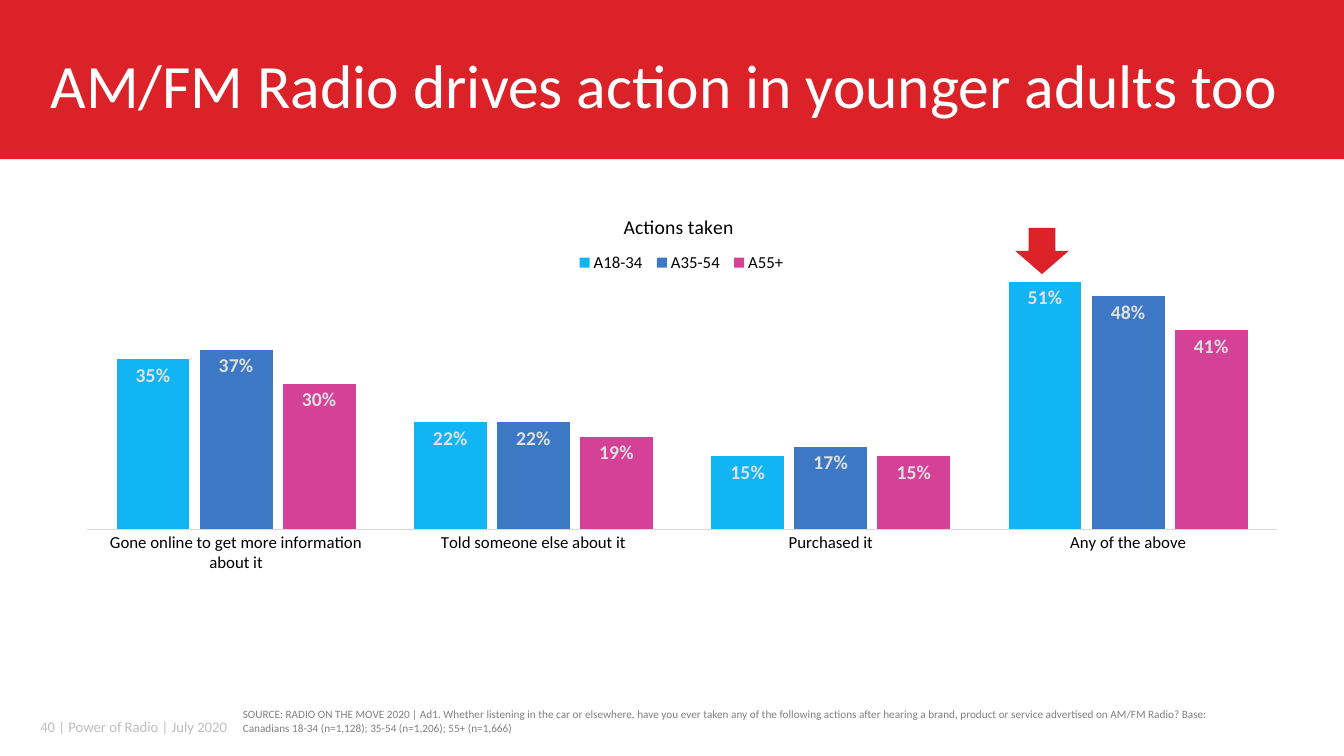
from lxml import etree
from pptx import Presentation
from pptx.chart.data import CategoryChartData
from pptx.dml.color import RGBColor
from pptx.enum.chart import XL_CHART_TYPE, XL_LABEL_POSITION, XL_LEGEND_POSITION, XL_TICK_MARK
from pptx.enum.shapes import MSO_SHAPE
from pptx.enum.text import MSO_ANCHOR, MSO_AUTO_SIZE, PP_ALIGN
from pptx.oxml.ns import qn
from pptx.util import Inches, Pt

COLUMNS = XL_CHART_TYPE.COLUMN_CLUSTERED
INSIDE_END = XL_LABEL_POSITION.INSIDE_END
LEGEND_TOP = XL_LEGEND_POSITION.TOP
NO_TICK = XL_TICK_MARK.NONE
RECTANGLE = MSO_SHAPE.RECTANGLE
DOWN_ARROW = MSO_SHAPE.DOWN_ARROW
MIDDLE = MSO_ANCHOR.MIDDLE
NO_AUTOFIT = MSO_AUTO_SIZE.NONE
LEFT = PP_ALIGN.LEFT

FONT_NAME = "Calibri"
RED = "DA2228"
CATEGORIES = ["Gone online to get more information about it",
              "Told someone else about it", "Purchased it", "Any of the above"]
AGE_GROUPS = [
    ("A18-34", [0.35, 0.22, 0.15, 0.51], "12B5F3"),
    ("A35-54", [0.37, 0.22, 0.17, 0.48], "3C78C3"),
    ("A55+", [0.30, 0.19, 0.15, 0.41], "D64198"),
]
SOURCE = ("SOURCE: RADIO ON THE MOVE 2020 | Ad1. Whether listening in the car or elsewhere, "
          "have you ever taken any of the following actions after hearing a brand, product or "
          "service advertised on AM/FM Radio? Base: Canadians 18-34 (n=1,128); "
          "35-54 (n=1,206); 55+ (n=1,666)")


def rgb(color):
    return RGBColor.from_string(color)


def set_font(font, size, color, bold=False):
    font.name = FONT_NAME
    font.size = Pt(size)
    font.bold = bold
    font.color.rgb = rgb(color)


def add_filled_shape(slide, preset, left, top, width, height):
    shape = slide.shapes.add_shape(preset, Inches(left), Inches(top),
                                   Inches(width), Inches(height))
    shape.shadow.inherit = False
    shape.fill.solid()
    shape.fill.fore_color.rgb = rgb(RED)
    shape.line.fill.background()
    return shape


def add_header(slide, left, top, width, height):
    band = add_filled_shape(slide, RECTANGLE, left, top, width, height)
    band.element.getparent().insert(2, band.element)
    title = slide.shapes.title
    title.left, title.top = Inches(left + 0.4), Inches(top + 0.15)
    title.width, title.height = Inches(12.5), Inches(1.45)
    frame = title.text_frame
    frame.text = "AM/FM Radio drives action in younger adults too"
    frame.auto_size = NO_AUTOFIT
    frame.vertical_anchor = MIDDLE
    paragraph = frame.paragraphs[0]
    paragraph.alignment = LEFT
    paragraph.line_spacing = 0.9
    set_font(paragraph.font, 44, "FFFFFF")


def add_text(slide, left, top, width, height, text, size, color):
    box = slide.shapes.add_textbox(Inches(left), Inches(top), Inches(width), Inches(height))
    frame = box.text_frame
    frame.word_wrap = True
    frame.text = text
    set_font(frame.paragraphs[0].font, size, color)
    return frame


def set_layout(chart, part, index, **settings):
    element = chart.element.find(f"{qn('c:chart')}/{qn(part)}")
    for old_layout in element.findall(qn("c:layout")):
        element.remove(old_layout)
    layout = etree.Element(qn("c:layout"))
    manual = etree.SubElement(layout, qn("c:manualLayout"))
    for name, value in settings.items():
        etree.SubElement(manual, qn(f"c:{name}")).set("val", str(value))
    element.insert(index, layout)


def add_actions_chart(slide, left, top, width, height):
    data = CategoryChartData(number_format="0%")
    data.categories = CATEGORIES
    for name, values, _ in AGE_GROUPS:
        data.add_series(name, values)
    chart = slide.shapes.add_chart(COLUMNS, Inches(left), Inches(top),
                                   Inches(width), Inches(height), data).chart
    set_font(chart.font, 10, "000000")

    chart.has_title = True
    title_frame = chart.chart_title.text_frame
    title_frame.text = "Actions taken"
    set_font(title_frame.paragraphs[0].font, 14, "000000")
    chart.has_legend = True
    chart.legend.position = LEGEND_TOP
    chart.legend.include_in_layout = False
    set_font(chart.legend.font, 12, "000000")

    category_axis = chart.category_axis
    category_axis.major_tick_mark = NO_TICK
    category_axis.format.line.color.rgb = rgb("D9D9D9")
    category_axis.format.line.width = Pt(0.75)
    set_font(category_axis.tick_labels.font, 12, "000000")
    value_axis = chart.value_axis
    value_axis.visible = False
    value_axis.has_major_gridlines = False
    value_axis.minimum_scale = 0
    value_axis.maximum_scale = 0.6

    plot = chart.plots[0]
    plot.vary_by_categories = False
    plot.gap_width = 80
    plot.overlap = -14
    for series, (_, _, color) in zip(plot.series, AGE_GROUPS):
        series.format.fill.solid()
        series.format.fill.fore_color.rgb = rgb(color)
        labels = series.data_labels
        labels.show_value = True
        labels.position = INSIDE_END
        labels.number_format = "0%"
        labels.number_format_is_linked = False
        set_font(labels.font, 14, "E0E0E0", bold=True)

    set_layout(chart, "c:plotArea", 0, layoutTarget="inner", xMode="edge", yMode="edge",
               x=0.017, y=0.097, w=0.967, h=0.577)
    set_layout(chart, "c:title", 1, xMode="edge", yMode="edge", x=0.45, y=0.04)
    set_layout(chart, "c:legend", 1, xMode="edge", yMode="edge",
               x=0.41, y=0.12, w=0.18, h=0.05)


def add_footer(slide, left, top):
    page = add_text(slide, left, top + 0.04, 2.99, 0.4,
                    "40 | Power of Radio | July 2020", 10.5, "BFBFBF")
    page.vertical_anchor = MIDDLE
    page.margin_left = page.margin_right = Inches(0.13)
    page.margin_top = page.margin_bottom = Inches(0.07)
    add_text(slide, left + 2.04, top, 9.88, 0.37, SOURCE, 8, "808080")


def main():
    presentation = Presentation()
    presentation.slide_width = Inches(13.33)
    presentation.slide_height = Inches(7.5)
    slide = presentation.slides.add_slide(presentation.slide_layouts[5])
    add_header(slide, 0, 0, 13.33, 1.58)
    add_actions_chart(slide, 0.66, 1.88, 12.2, 5)
    add_footer(slide, 0.27, 6.97)
    add_filled_shape(slide, DOWN_ARROW, 10.07, 2.26, 0.53, 0.46)
    presentation.save("out.pptx")


if __name__ == "__main__":
    main()
